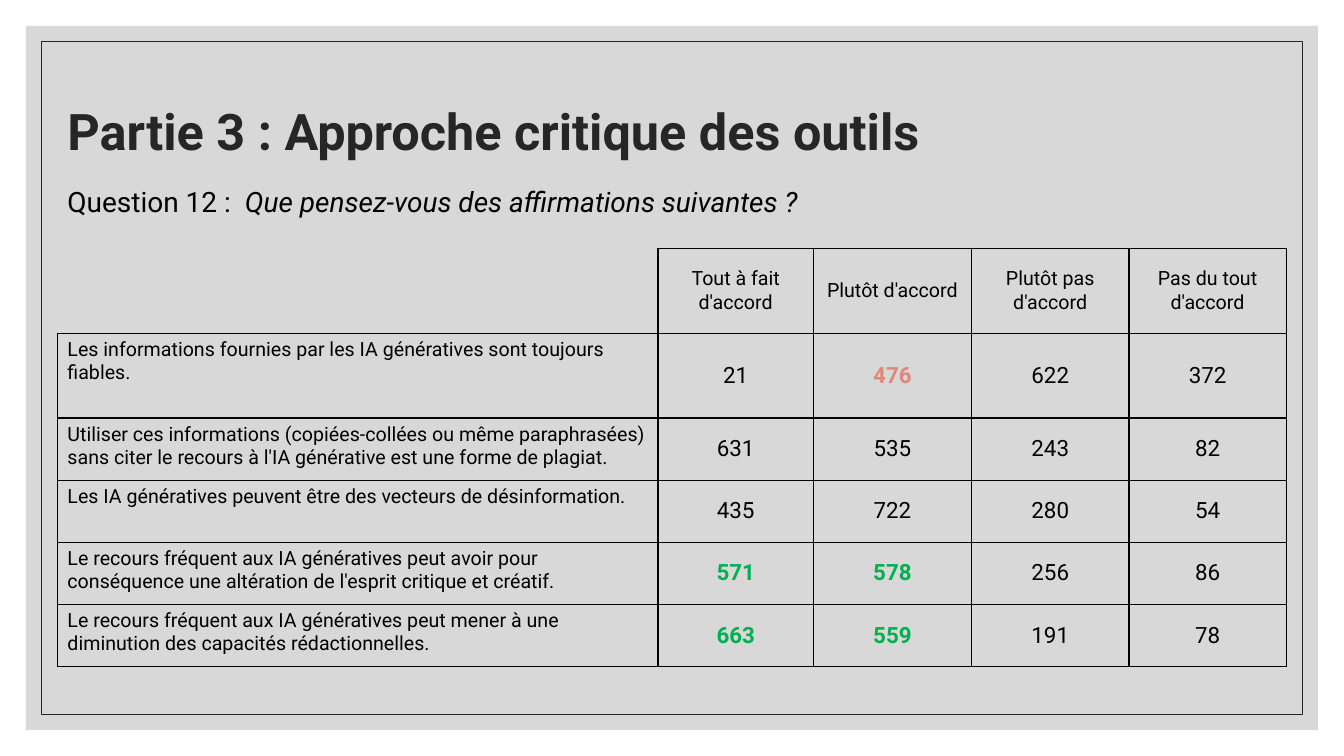
from lxml.etree import SubElement
from pptx import Presentation
from pptx.dml.color import RGBColor
from pptx.enum.shapes import MSO_SHAPE
from pptx.enum.text import MSO_ANCHOR, PP_ALIGN
from pptx.oxml.ns import qn
from pptx.util import Pt

# Content
TITLE = "Partie 3 : Approche critique des outils"
QUESTION = [("Question 12 : ", False), (" Que pensez-vous des affirmations suivantes ?", True)]
HEADERS = ["", "Tout à fait d'accord", "Plutôt d'accord", "Plutôt pas d'accord", "Pas du tout d'accord"]
ANSWERS = [
    ("Les informations fournies par les IA génératives sont toujours fiables.", 21, 476, 622, 372),
    ("Utiliser ces informations (copiées-collées ou même paraphrasées) sans citer le recours "
     "à l'IA générative est une forme de plagiat.", 631, 535, 243, 82),
    ("Les IA génératives peuvent être des vecteurs de désinformation.", 435, 722, 280, 54),
    ("Le recours fréquent aux IA génératives peut avoir pour conséquence une altération "
     "de l'esprit critique et créatif.", 571, 578, 256, 86),
    ("Le recours fréquent aux IA génératives peut mener à une diminution des capacités "
     "rédactionnelles.", 663, 559, 191, 78),
]

# Format
FONT = "Roboto"
BLACK = RGBColor(0x00, 0x00, 0x00)
DARK = RGBColor(0x26, 0x26, 0x26)
GREY = RGBColor(0xBF, 0xBF, 0xBF)
CORAL = RGBColor(0xE3, 0x88, 0x79)
GREEN = RGBColor(0x00, 0xB0, 0x50)
HIGHLIGHTS = {(1, 2): CORAL, (4, 1): GREEN, (4, 2): GREEN, (5, 1): GREEN, (5, 2): GREEN}

SLIDE_WIDTH, SLIDE_HEIGHT = 960, 540
PANEL_MARGIN, FRAME_MARGIN = 18.6, 29.5
LEFT = 41
COLUMN_WIDTHS = [429.1, 110.9, 113, 112.5, 112.3]
ROW_HEIGHTS = [60.6] * 2 + [44.4] * 4


def add_run(paragraph, text, size, **changes):
    run = paragraph.add_run()
    run.text = text
    color = changes.pop("color", BLACK)
    for name, value in {"name": FONT, "size": Pt(size), "bold": False, **changes}.items():
        setattr(run.font, name, value)
    run.font.color.rgb = color


def add_rectangle(slide, margin):
    shape = slide.shapes.add_shape(
        MSO_SHAPE.RECTANGLE, Pt(margin), Pt(margin),
        Pt(SLIDE_WIDTH - 2 * margin), Pt(SLIDE_HEIGHT - 2 * margin))
    shape.shadow.inherit = False
    return shape


def set_borders(cell, visible_sides):
    properties = cell._tc.get_or_add_tcPr()
    for side in "LRTB":
        line = SubElement(properties, qn(f"a:ln{side}"), w=str(Pt(1)))
        if side in visible_sides:
            fill = SubElement(line, qn("a:solidFill"))
            SubElement(fill, qn("a:srgbClr"), val=str(BLACK))
        else:
            SubElement(line, qn("a:noFill"))


def main():
    presentation = Presentation()
    presentation.slide_width, presentation.slide_height = Pt(SLIDE_WIDTH), Pt(SLIDE_HEIGHT)
    slide = presentation.slides.add_slide(presentation.slide_layouts[5])

    # Background panel and frame
    panel = add_rectangle(slide, PANEL_MARGIN)
    panel.fill.solid()
    panel.fill.fore_color.rgb = GREY
    panel_color = panel.element.spPr.find(f"{qn('a:solidFill')}/{qn('a:srgbClr')}")
    SubElement(panel_color, qn("a:alpha"), val="60000")
    panel.line.fill.background()
    frame = add_rectangle(slide, FRAME_MARGIN)
    frame.fill.background()
    frame.line.color.rgb = DARK
    frame.line.width = Pt(0.5)

    # Title, brought in front of the panel
    title = slide.shapes.title
    slide.shapes.element.append(title.element)
    title.left, title.top, title.width, title.height = Pt(LEFT), Pt(41.8), Pt(792), Pt(108)
    title.text_frame.vertical_anchor = MSO_ANCHOR.MIDDLE
    paragraph = title.text_frame.paragraphs[0]
    paragraph.alignment = PP_ALIGN.LEFT
    paragraph.line_spacing = 0.9
    add_run(paragraph, TITLE, 36, bold=True, color=DARK)

    # Question
    question = slide.shapes.add_textbox(Pt(LEFT), Pt(123.8), Pt(878), Pt(40))
    question.text_frame.word_wrap = True
    paragraph = question.text_frame.paragraphs[0]
    paragraph.line_spacing = 1.2
    paragraph.space_before = Pt(9)
    for text, italic in QUESTION:
        add_run(paragraph, text, 20, italic=italic)

    # Table of answers
    rows = [HEADERS, *ANSWERS]
    table = slide.shapes.add_table(
        len(rows), len(HEADERS), Pt(LEFT), Pt(177.4),
        Pt(sum(COLUMN_WIDTHS)), Pt(sum(ROW_HEIGHTS))).table
    table.first_row = table.horz_banding = False
    for column, width in zip(table.columns, COLUMN_WIDTHS):
        column.width = Pt(width)
    for row, height in zip(table.rows, ROW_HEIGHTS):
        row.height = Pt(height)

    for row_index, row in enumerate(rows):
        for column_index, value in enumerate(row):
            cell = table.cell(row_index, column_index)
            set_borders(cell, "LRTB" if row_index or column_index else "RB")
            cell.fill.background()
            if value == "":
                continue
            paragraph = cell.text_frame.paragraphs[0]
            if column_index:
                cell.vertical_anchor = MSO_ANCHOR.MIDDLE
                paragraph.alignment = PP_ALIGN.CENTER
            position = (row_index, column_index)
            add_run(paragraph, str(value), 16 if row_index and column_index else 14,
                    bold=position in HIGHLIGHTS, color=HIGHLIGHTS.get(position, BLACK))

    presentation.save("out.pptx")


if __name__ == "__main__":
    main()
